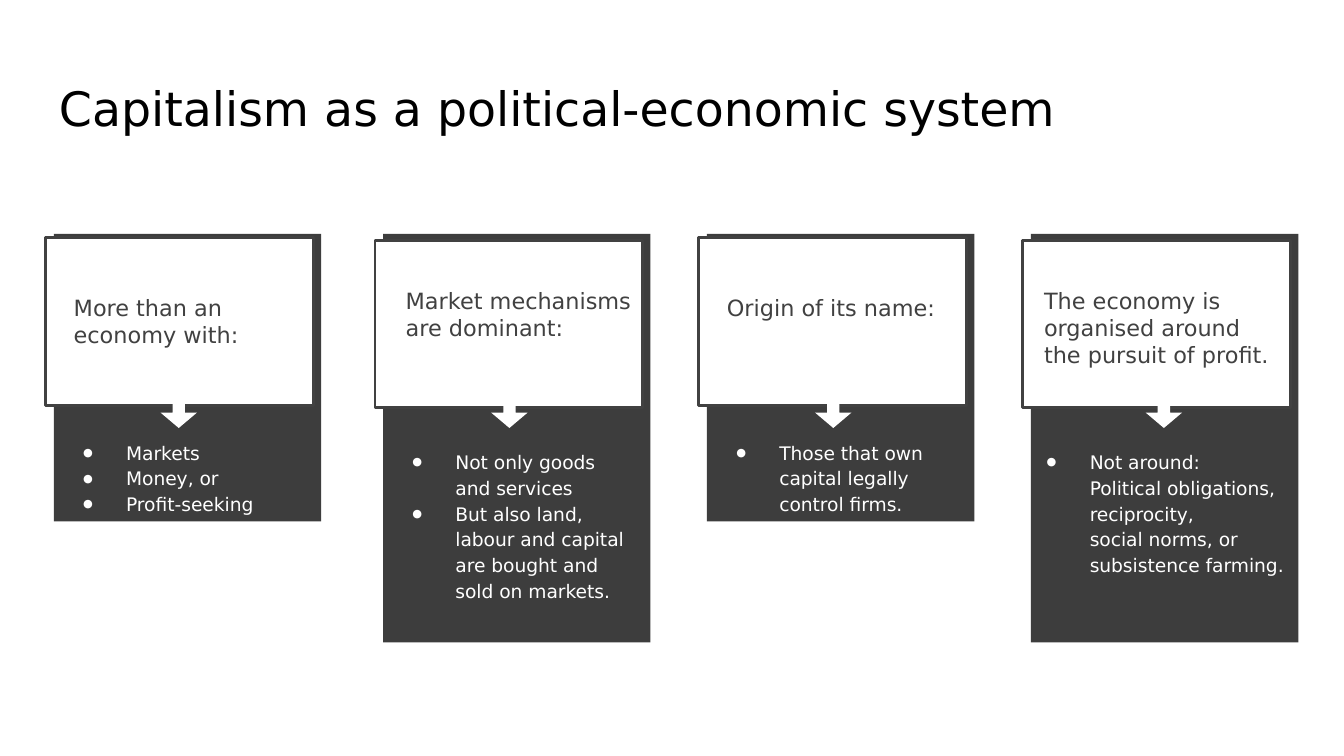
from lxml import etree
from pptx import Presentation
from pptx.dml.color import RGBColor
from pptx.enum.shapes import MSO_SHAPE
from pptx.oxml.ns import qn
from pptx.util import Inches, Pt

RECTANGLE = MSO_SHAPE.RECTANGLE
ARROW = MSO_SHAPE.RIGHT_ARROW
FONT = "DejaVu Sans"
DARK, OUTLINE, WHITE, BLACK = "3D3D3D", "414141", "FFFFFF", "000000"

# Shared column grid, in inches
PANEL_TOP, PANEL_SHIFT, CARD_WIDTH = 1.74, 0.06, 1.99
ARROW_TOP, ARROW_WIDTH, ARROW_HEIGHT = 2.95, 0.2, 0.27

# Row positions: (top, height) for each part of a short or a tall column
SHORT = {"panel": 2.14, "card": (1.77, 1.25), "heading": (2.09, 0.66), "list": (3.16, 0.57)}
TALL = {"panel": 3.04, "card": (1.79, 1.24), "heading": (2.04, 0.94), "list": (3.23, 1.43)}

# Left edge, rows, heading (shift, width), arrow shift, list (shift, width), heading, bullets
COLUMNS = [
    (0.34, SHORT, (0.11, 1.78), 0.89, (0, 1.99), "More than an economy with:",
     ["Markets", "Money, or", "Profit-seeking"]),
    (2.79, TALL, (0.13, 1.88), 0.9, (0, 1.99), "Market mechanisms are dominant:",
     ["Not only goods and services",
      "But also land, labour and capital are bought and sold on markets."]),
    (5.2, SHORT, (0.11, 1.88), 0.9, (0, 1.99), "Origin of its name:",
     ["Those that own capital legally control firms."]),
    (7.61, TALL, (0.06, 1.96), 0.95, (-0.1, 2.15),
     "The economy is organised around the pursuit of profit.",
     ["Not around: \nPolitical obligations, reciprocity, \nsocial norms, or subsistence farming."]),
]

deck = Presentation()
deck.slide_width = Inches(10)
deck.slide_height = deck.slide_width * 9 // 16
page = deck.slides.add_slide(deck.slide_layouts[6])


def add_block(kind, left, top, width, height, fill, line=None):
    block = page.shapes.add_shape(kind, Inches(left), Inches(top), Inches(width), Inches(height))
    block.shadow.inherit = False
    block.fill.solid()
    block.fill.fore_color.rgb = RGBColor.from_string(fill)
    if line:
        block.line.color.rgb = RGBColor.from_string(line)
        block.line.width = Pt(1.5)
    else:
        block.line.fill.background()
    return block


def add_text(left, top, width, height, lines, size, color, bullets=False):
    box = page.shapes.add_textbox(Inches(left), Inches(top), Inches(width), Inches(height))
    frame = box.text_frame
    frame.word_wrap = True
    frame.margin_left = frame.margin_right = Inches(0.1)
    frame.margin_top = frame.margin_bottom = Inches(0.1)
    for index, line in enumerate(lines):
        para = frame.add_paragraph() if index else frame.paragraphs[0]
        for part, words in enumerate(line.split("\n")):
            if part:
                para.add_line_break()
            span = para.add_run()
            span.text = words
            span.font.name = FONT
            span.font.size = Pt(size)
            span.font.color.rgb = RGBColor.from_string(color)
        if bullets:
            para.line_spacing = 1.15
            properties = para._p.get_or_add_pPr()
            properties.set("marL", str(Inches(0.5)))
            properties.set("indent", str(Inches(-0.32)))
            bullet_color = etree.SubElement(properties, qn("a:buClr"))
            etree.SubElement(bullet_color, qn("a:srgbClr"), val=color)
            etree.SubElement(properties, qn("a:buSzPct"), val="60000")
            etree.SubElement(properties, qn("a:buFont"), typeface=FONT)
            etree.SubElement(properties, qn("a:buChar"), char="●")


add_text(0.34, 0.49, 9.32, 0.63, ["Capitalism as a political-economic system"], 25.4, BLACK)

for left, rows, heading_span, arrow_shift, list_span, heading, bullets in COLUMNS:
    add_block(RECTANGLE, left + PANEL_SHIFT, PANEL_TOP, CARD_WIDTH, rows["panel"], DARK)
    card_top, card_height = rows["card"]
    add_block(RECTANGLE, left, card_top, CARD_WIDTH, card_height, WHITE, OUTLINE)

    shift, width = heading_span
    top, height = rows["heading"]
    add_text(left + shift, top, width, height, [heading], 12, OUTLINE)

    arrow = add_block(ARROW, left + arrow_shift, ARROW_TOP, ARROW_WIDTH, ARROW_HEIGHT, WHITE)
    arrow.rotation = 90
    arrow.adjustments[0] = 0.34
    arrow.adjustments[1] = 0.57

    shift, width = list_span
    top, height = rows["list"]
    add_text(left + shift, top, width, height, bullets, 10, WHITE, bullets=True)

deck.save("out.pptx")
